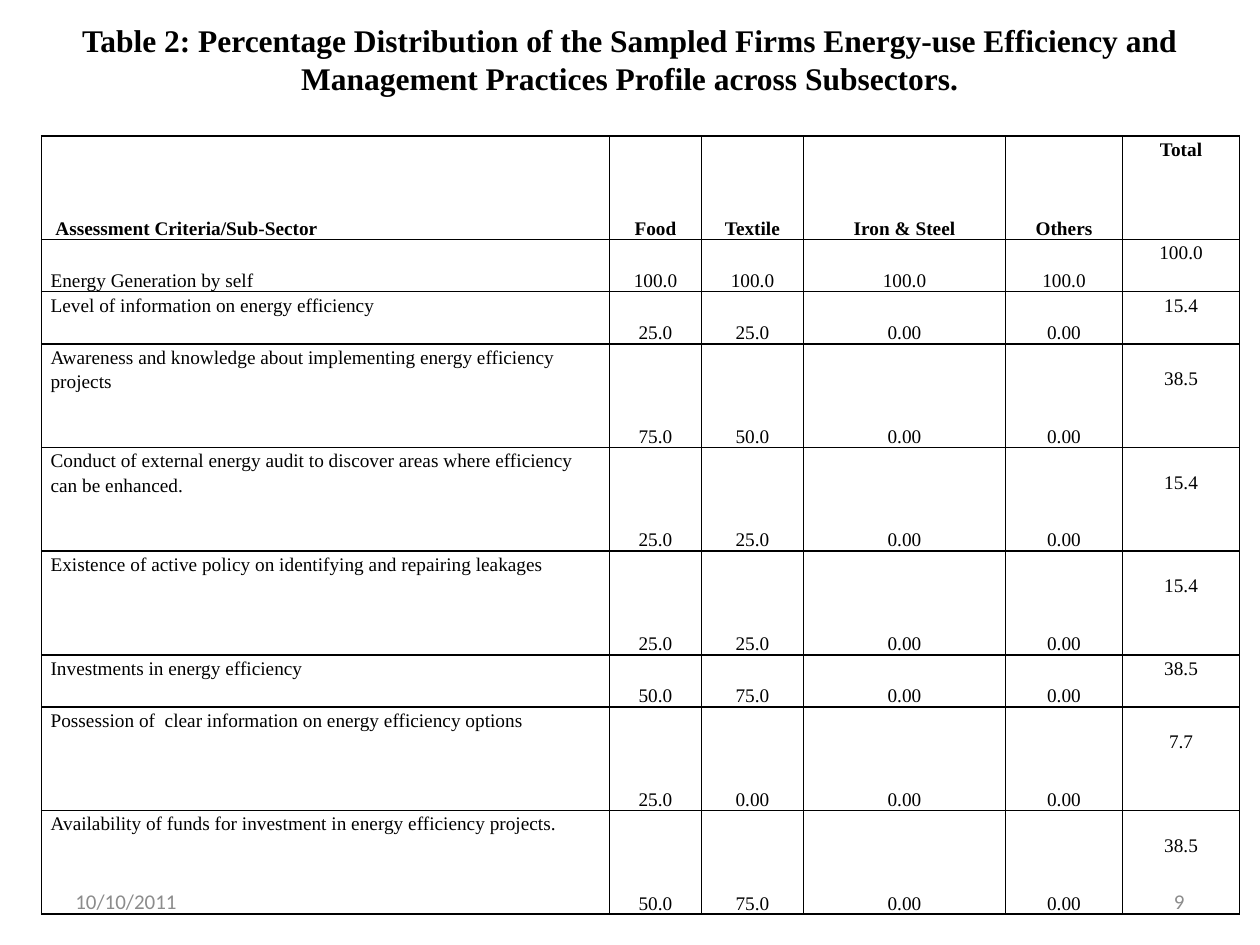
from lxml import etree
from pptx import Presentation
from pptx import util as u
from pptx.dml.color import RGBColor
from pptx.enum import text
from pptx.oxml.ns import qn

SERIF = "Times New Roman"
BLACK = "000000"
GREY = "8C8C8C"
LEFT, CENTER, RIGHT = text.PP_ALIGN.LEFT, text.PP_ALIGN.CENTER, text.PP_ALIGN.RIGHT
TOP, MIDDLE, BOTTOM = (text.MSO_ANCHOR.TOP, text.MSO_ANCHOR.MIDDLE,
                       text.MSO_ANCHOR.BOTTOM)

TITLE = ("Table 2: Percentage Distribution of the Sampled Firms Energy-use "
         "Efficiency and Management Practices Profile across Subsectors.")
COLUMN_WIDTHS = [11.45, 1.85, 2.06, 4.07, 2.36, 2.36]
TALL, SHORT = 2.09, 1.05
LOWERED = 0.43
HEADER = ["Assessment Criteria/Sub-Sector", "Food", "Textile", "Iron & Steel",
          "Others", "Total"]
ROWS = [
    (SHORT, "Energy Generation by self",
     "100.0", "100.0", "100.0", "100.0", "100.0"),
    (SHORT, "Level of information on energy efficiency",
     "25.0", "25.0", "0.00", "0.00", "15.4"),
    (TALL, "Awareness and knowledge about implementing energy efficiency projects",
     "75.0", "50.0", "0.00", "0.00", "38.5"),
    (TALL, "Conduct of external energy audit to discover areas where efficiency "
     "can be enhanced.", "25.0", "25.0", "0.00", "0.00", "15.4"),
    (TALL, "Existence of active policy on identifying and repairing leakages",
     "25.0", "25.0", "0.00", "0.00", "15.4"),
    (SHORT, "Investments in energy efficiency",
     "50.0", "75.0", "0.00", "0.00", "38.5"),
    (TALL, "Possession of  clear information on energy efficiency options",
     "25.0", "0.00", "0.00", "0.00", "7.7"),
    (TALL, "Availability of funds for investment in energy efficiency projects.",
     "50.0", "75.0", "0.00", "0.00", "38.5"),
]


def color(value):
    return RGBColor.from_string(value)


def add_span(para, words, size, font, shade, bold=False):
    span = para.add_run()
    span.text = words
    span.font.size = u.Pt(size)
    span.font.name = font
    span.font.bold = bold
    span.font.color.rgb = color(shade)


def add_label(page, place, words, size, font, shade, align, bold=False):
    box = page.shapes.add_textbox(*[u.Cm(length) for length in place])
    frame = box.text_frame
    frame.word_wrap = True
    frame.vertical_anchor = MIDDLE
    para = frame.paragraphs[0]
    para.alignment = align
    add_span(para, words, size, font, shade, bold)
    return frame


def set_borders(cell, width, shade):
    properties = cell._tc.get_or_add_tcPr()
    for position, side in enumerate(["lnL", "lnR", "lnT", "lnB"]):
        line = etree.Element(qn("a:" + side), w=str(u.Pt(width)))
        fill = etree.SubElement(line, qn("a:solidFill"))
        etree.SubElement(fill, qn("a:srgbClr"), val=shade)
        properties.insert(position, line)


def fill_cell(cell, spans, align, anchor, top=0):
    cell.fill.background()
    set_borders(cell, 1, BLACK)
    cell.margin_left = cell.margin_right = u.Cm(0.18)
    cell.margin_top = u.Cm(top)
    cell.margin_bottom = 0
    cell.vertical_anchor = anchor
    para = cell.text_frame.paragraphs[0]
    para.alignment = align
    para.line_spacing = 1.15
    for words, bold in spans:
        add_span(para, words, 11, SERIF, BLACK, bold)


def add_profile_table(page):
    rows = [(TALL, *HEADER), *ROWS]
    frame = page.shapes.add_table(
        len(rows), len(COLUMN_WIDTHS), u.Cm(0.84), u.Cm(2.74),
        u.Cm(sum(COLUMN_WIDTHS)), u.Cm(sum(row[0] for row in rows)))
    table = frame.table
    table.first_row = table.horz_banding = False
    for column, width in zip(table.columns, COLUMN_WIDTHS):
        column.width = u.Cm(width)
    last = len(COLUMN_WIDTHS) - 1
    for r, (height, *entries) in enumerate(rows):
        table.rows[r].height = u.Cm(height)
        header = r == 0
        for c, words in enumerate(entries):
            spans = [(words, header)]
            if header and c == 0:
                spans.insert(0, (" ", False))
            at_top = c == last or (c == 0 and r > 1)
            lowered = c == last and height == TALL and not header
            fill_cell(table.cell(r, c), spans, LEFT if c == 0 else CENTER,
                      TOP if at_top else BOTTOM, LOWERED if lowered else 0)


def main():
    deck = Presentation()
    deck.slide_width, deck.slide_height = u.Cm(25.4), u.Cm(19.05)
    page = deck.slides.add_slide(deck.slide_layouts[6])
    title = add_label(page, (1.27, 0.76, 22.86, 1.57), TITLE, 18, SERIF, BLACK,
                      CENTER, bold=True)
    title.margin_bottom = u.Cm(0.85)
    add_profile_table(page)
    add_label(page, (1.27, 17.66, 5.93, 1.01), "10/10/2011", 12, "Calibri", GREY, LEFT)
    add_label(page, (18.2, 17.66, 5.93, 1.01), "9", 12, "Calibri", GREY, RIGHT)
    deck.save("out.pptx")


if __name__ == "__main__":
    main()
